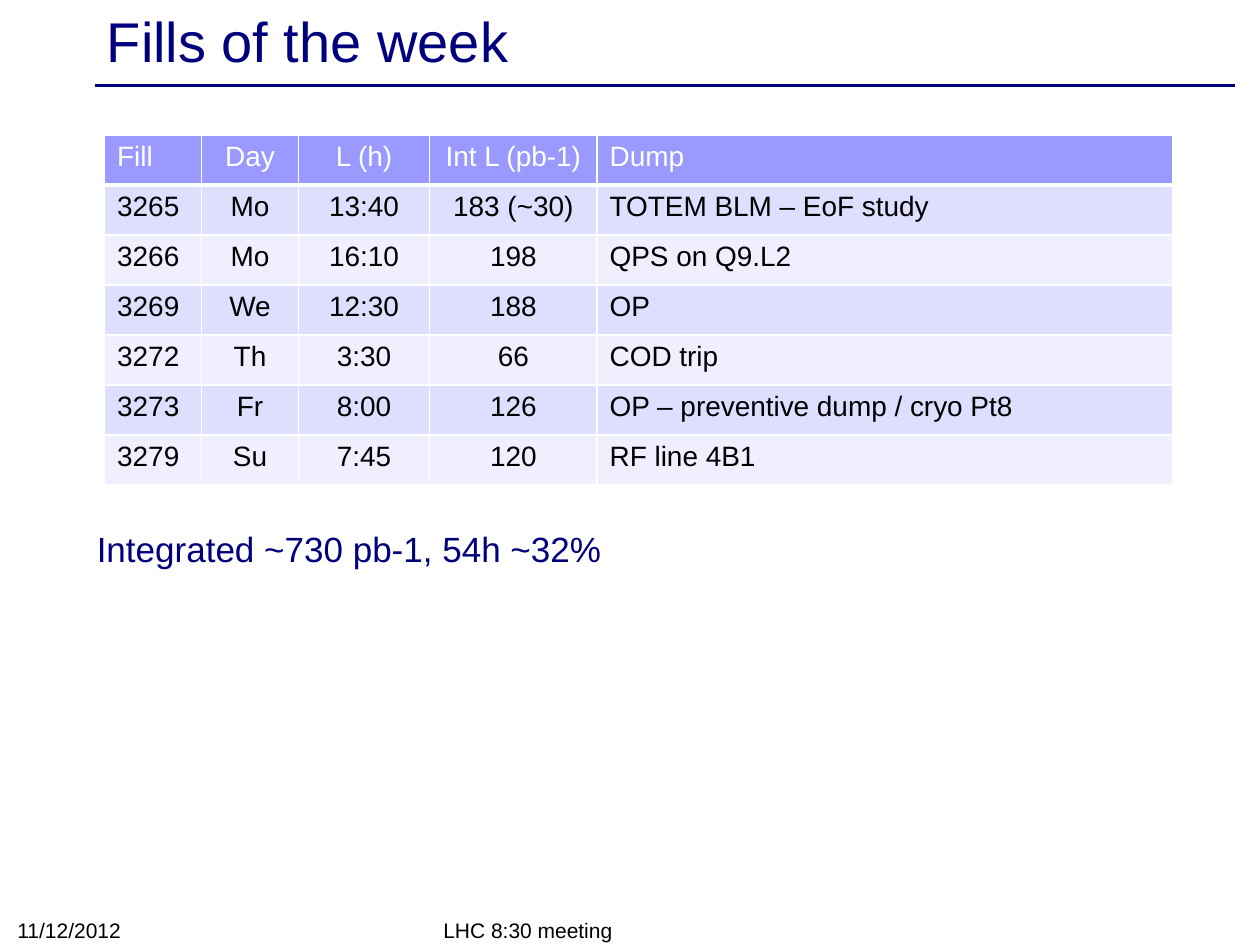
import pptx
import pptx.util
import pptx.dml.color
import pptx.enum.shapes
import pptx.enum.text
import pptx.oxml
import pptx.oxml.ns
from lxml import etree

Inches, Pt = pptx.util.Inches, pptx.util.Pt
RGB = pptx.dml.color.RGBColor
Align = pptx.enum.text.PP_ALIGN
Anchor = pptx.enum.text.MSO_ANCHOR

NAVY = RGB(0x00, 0x00, 0x7D)
BLACK = RGB(0x00, 0x00, 0x00)
WHITE = RGB(0xFF, 0xFF, 0xFF)
HEAD = RGB(0x99, 0x99, 0xFF)
BANDS = [RGB(0xDE, 0xDE, 0xFF), RGB(0xEF, 0xEF, 0xFF)]
FONT = "Arial"

# Content: text, box, size, colour, anchor, wrap
TEXTS = [
    ("Fills of the week", (0.75, 0.03, 9, 0.57), 32, NAVY, Anchor.MIDDLE, True),
    ("LHC 8:30 meeting", (3.42, 7.25, 3.17, 0.28), 12, BLACK, Anchor.BOTTOM, True),
    ("11/12/2012", (0.04, 7.24, 2.33, 0.29), 12, BLACK, Anchor.BOTTOM, True),
    ("Integrated ~730 pb-1, 54h ~32%", (0.67, 4.14, 4.23, 0.44), 20, NAVY,
     Anchor.TOP, False),
]
FILLS = [
    ("Fill", "Day", "L (h)", "Int L (pb-1)", "Dump"),
    ("3265", "Mo", "13:40", "183 (~30)", "TOTEM BLM – EoF study"),
    ("3266", "Mo", "16:10", "198", "QPS on Q9.L2"),
    ("3269", "We", "12:30", "188", "OP"),
    ("3272", "Th", "3:30", "66", "COD trip"),
    ("3273", "Fr", "8:00", "126", "OP – preventive dump / cryo Pt8"),
    ("3279", "Su", "7:45", "120", "RF line 4B1"),
]
COLS = [0.77, 0.77, 1.04, 1.33, 4.57]
ALIGNS = [Align.LEFT, Align.CENTER, Align.CENTER, Align.CENTER, Align.LEFT]
LEFT, TOP, HIGH = 0.83, 1.07, 2.78


def style(para, size, color):
    for run in para.runs:
        run.font.name = FONT
        run.font.size = Pt(size)
        run.font.color.rgb = color


def add_text(slide, text, box, size, color, anchor, wrap):
    frame = slide.shapes.add_textbox(*map(Inches, box)).text_frame
    frame.text = text
    frame.word_wrap = wrap
    frame.vertical_anchor = anchor
    style(frame.paragraphs[0], size, color)


def set_edges(cell, widths):
    props = cell._tc.get_or_add_tcPr()
    for spot, (side, width) in enumerate(widths.items()):
        edge = pptx.oxml.parse_xml(
            f'<a:{side} {pptx.oxml.ns.nsdecls("a")} w="{Pt(width)}">'
            f'<a:solidFill><a:srgbClr val="{WHITE}"/></a:solidFill></a:{side}>')
        props.insert(spot, edge)


def add_table(slide):
    rows = len(FILLS)
    table = slide.shapes.add_table(
        rows, len(COLS), Inches(LEFT), Inches(TOP),
        Inches(sum(COLS)), Inches(HIGH)).table
    for col, width in zip(table.columns, COLS):
        col.width = Inches(width)
    for r, fill in enumerate(FILLS):
        table.rows[r].height = Inches(HIGH / rows)
        for c, text in enumerate(fill):
            cell = table.cell(r, c)
            cell.text = text
            para = cell.text_frame.paragraphs[0]
            para.alignment = ALIGNS[c]
            style(para, 16, BLACK if r else WHITE)
            cell.fill.solid()
            cell.fill.fore_color.rgb = BANDS[(r - 1) % 2] if r else HEAD
            set_edges(cell, {"lnL": 1, "lnR": 1, "lnT": 3 if r == 1 else 1,
                             "lnB": 1 if r else 3})


def add_rule(slide):
    rule = slide.shapes.add_connector(
        pptx.enum.shapes.MSO_CONNECTOR.STRAIGHT,
        *map(Inches, (0.75, 0.68, 9.8, 0.68)))
    rule.line.color.rgb = NAVY
    rule.line.width = Pt(2)
    etree.SubElement(rule._element.spPr, pptx.oxml.ns.qn("a:effectLst"))


def main():
    deck = pptx.Presentation()
    deck.slide_width, deck.slide_height = Inches(10), Inches(7.5)
    slide = deck.slides.add_slide(deck.slide_layouts[6])
    # Rule under the title
    add_rule(slide)
    # Table of fills
    add_table(slide)
    # Title, footer and summary
    for item in TEXTS:
        add_text(slide, *item)
    deck.save("out.pptx")


if __name__ == "__main__":
    main()
